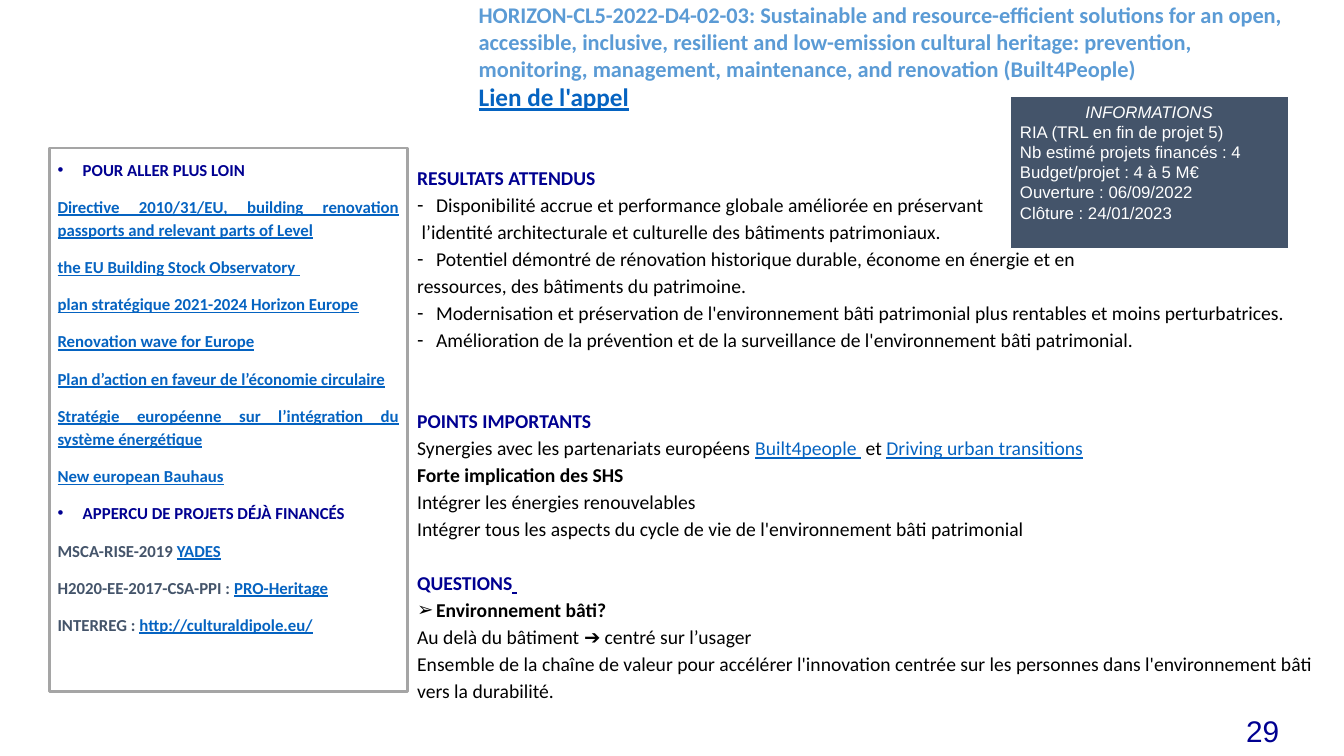
from dataclasses import dataclass

from lxml import etree
from pptx import Presentation
from pptx.dml.color import RGBColor
from pptx.enum import shapes, text
from pptx.oxml.ns import qn
from pptx.util import Pt

# Content: a paragraph is (style, runs), a run is (role, text)
PAGE_NUMBER = [("number", [("number", "29")])]

CALL = [
    ("call", [("call", "HORIZON-CL5-2022-D4-02-03: Sustainable and resource-efficient solutions for an open, "
                       "accessible, inclusive, resilient and low-emission cultural heritage: prevention, "
                       "monitoring, management, maintenance, and renovation (Built4People)")]),
    ("call_link", [("link", "Lien de l'appel")]),
]

INFORMATION = [("info_title", [("info_title", "INFORMATIONS")])] + [
    ("info", [("info", line)]) for line in (
        "RIA (TRL en fin de projet 5)",
        "Nb estimé projets financés : 4",
        "Budget/projet : 4 à 5 M€",
        "Ouverture : 06/09/2022",
        "Clôture : 24/01/2023",
    )
]

DETAILS = [
    ("body", [("heading", "RESULTATS ATTENDUS")]),
    ("dash", [("plain", "Disponibilité accrue et performance globale améliorée en préservant")]),
    ("body", [("plain", " l’identité architecturale et culturelle des bâtiments patrimoniaux.")]),
    ("dash", [("plain", "Potentiel démontré de rénovation historique durable, économe en énergie et en")]),
    ("body", [("plain", "ressources, des bâtiments du patrimoine.")]),
    ("dash", [("plain", "Modernisation et préservation de l'environnement bâti patrimonial plus rentables "
                        "et moins perturbatrices.")]),
    ("dash", [("plain", "Amélioration de la prévention et de la surveillance de l'environnement "
                        "bâti patrimonial.")]),
    ("after_two_lines", [("heading", "POINTS IMPORTANTS")]),
    ("body", [("plain", "Synergies avec les partenariats européens "), ("light_link", "Built4people "),
              ("plain", " et "), ("light_link", "Driving urban transitions")]),
    ("body", [("strong", "Forte implication des SHS")]),
    ("body", [("plain", "Intégrer les énergies renouvelables")]),
    ("body", [("plain", "Intégrer tous les aspects du cycle de vie de l'environnement bâti patrimonial")]),
    ("after_line", [("heading", "QUESTIONS"), ("heading_line", " ")]),
    ("arrow", [("strong", "Environnement bâti?")]),
    ("left", [("plain", "Au delà du bâtiment ➔ centré sur l’usager")]),
    ("left", [("plain", "Ensemble de la chaîne de valeur pour accélérer l'innovation centrée sur les personnes "
                        "dans l'environnement bâti vers la durabilité.")]),
]

FURTHER_LINKS = [
    "Directive 2010/31/EU, building renovation passports and relevant parts of Level",
    "the EU Building Stock Observatory ",
    "plan stratégique 2021-2024 Horizon Europe",
    "Renovation wave for Europe",
    "Plan d’action en faveur de l’économie circulaire",
    "Stratégie européenne sur l’intégration du système énergétique",
    "New european Bauhaus",
]
PROJECTS = [
    ("MSCA-RISE-2019 ", "YADES"),
    ("H2020-EE-2017-CSA-PPI : ", "PRO-Heritage"),
    ("INTERREG : ", "http://culturaldipole.eu/"),
]
FURTHER = (
    [("side_first", [("heading", "POUR ALLER PLUS LOIN")])]
    + [("side", [("link", link)]) for link in FURTHER_LINKS]
    + [("side_bullet", [("heading", "APPERCU DE PROJETS DÉJÀ FINANCÉS")])]
    + [("side_left", [("programme", programme), ("link", project)]) for programme, project in PROJECTS]
)


# Theme
@dataclass
class Style:
    size: float = 14
    font: str = "Calibri"
    align: str = "JUSTIFY"
    spacing: float = 1.15
    before: float = 0
    bullet: str = ""
    indent: float = 13.5


class Theme:
    navy, slate, link, sky = "000091", "44546A", "0563C1", "5B9BD5"
    black, white, grey = "000000", "FFFFFF", "A5A5A5"
    line_pitch = 19.3
    # role: colour, bold, italic, underline
    roles = {
        "number": (navy, False, False, False),
        "call": (sky, True, False, False),
        "link": (link, True, False, True),
        "light_link": (link, False, False, True),
        "info_title": (white, False, True, False),
        "info": (white, False, False, False),
        "heading": (navy, True, False, False),
        "heading_line": (navy, True, False, True),
        "plain": (black, False, False, False),
        "strong": (black, True, False, False),
        "programme": (slate, True, False, False),
    }
    styles = {
        "number": Style(21.3, "Arial", "RIGHT", 1),
        "call": Style(16, align="LEFT", spacing=1),
        "call_link": Style(18, align="LEFT", spacing=1),
        "info_title": Style(12, "Arial", "CENTER", 1),
        "info": Style(12, "Arial", "LEFT", 1),
        "body": Style(),
        "left": Style(align="LEFT"),
        "dash": Style(bullet="-"),
        "arrow": Style(align="LEFT", bullet="➢"),
        "after_line": Style(before=line_pitch),
        "after_two_lines": Style(before=2 * line_pitch),
        "side_first": Style(12, bullet="•", indent=18),
        "side": Style(12, before=10),
        "side_bullet": Style(12, align="LEFT", before=10, bullet="•", indent=18),
        "side_left": Style(12, align="LEFT", before=10),
    }


def paint(font, role):
    colour, font.bold, font.italic, font.underline = Theme.roles[role]
    font.color.rgb = RGBColor.from_string(colour)


def add_bullet(paragraph, style):
    properties = paragraph._p.get_or_add_pPr()
    properties.set("marL", str(Pt(style.indent)))
    properties.set("indent", str(Pt(-style.indent)))
    etree.SubElement(properties, qn("a:buFont")).set("typeface", "Arial")
    etree.SubElement(properties, qn("a:buChar")).set("char", style.bullet)


def write(shape, paragraphs, anchor="TOP", inset=None):
    frame = shape.text_frame
    frame.word_wrap = True
    frame.vertical_anchor = text.MSO_ANCHOR[anchor]
    if inset is not None:
        frame.margin_left = frame.margin_right = Pt(inset)
        frame.margin_top = frame.margin_bottom = Pt(inset)
    for index, (style_name, runs) in enumerate(paragraphs):
        style = Theme.styles[style_name]
        paragraph = frame.add_paragraph() if index else frame.paragraphs[0]
        if style.bullet:
            add_bullet(paragraph, style)
        paragraph.alignment = text.PP_ALIGN[style.align]
        paragraph.line_spacing = style.spacing
        if style.before:
            paragraph.space_before = Pt(style.before)
        paragraph.font.name, paragraph.font.size = style.font, Pt(style.size)
        if len(runs) == 1:
            paint(paragraph.font, runs[0][0])
        for role, words in runs:
            run = paragraph.add_run()
            run.text = words
            if len(runs) > 1:
                paint(run.font, role)


def add_panel(slide, box, fill, line, width):
    panel = slide.shapes.add_shape(shapes.MSO_SHAPE.RECTANGLE, *map(Pt, box))
    panel.shadow.inherit = False
    if fill:
        panel.fill.solid()
        panel.fill.fore_color.rgb = RGBColor.from_string(fill)
    else:
        panel.fill.background()
    panel.line.color.rgb = RGBColor.from_string(line)
    panel.line.width = Pt(width)
    return panel


def add_text(slide, box):
    return slide.shapes.add_textbox(*map(Pt, box))


def main():
    deck = Presentation()
    deck.slide_width, deck.slide_height = Pt(960), Pt(540)
    slide = deck.slides.add_slide(deck.slide_layouts[6])

    # Page number and key facts
    write(add_text(slide, (797.8, 504, 123, 36)), PAGE_NUMBER, "MIDDLE")
    write(add_panel(slide, (721.5, 69, 198.7, 108.7), Theme.slate, Theme.white, 0.75), INFORMATION)

    # Expected results, main points and questions
    write(add_text(slide, (290.9, 112.3, 658, 417)), DETAILS)

    # Call title
    write(add_text(slide, (334.8, -2.9, 605.5, 87)), CALL)

    # Further reading
    write(add_panel(slide, (35.3, 105.8, 255.6, 388), None, Theme.grey, 2), FURTHER, inset=5.8)

    deck.save("out.pptx")


if __name__ == "__main__":
    main()
